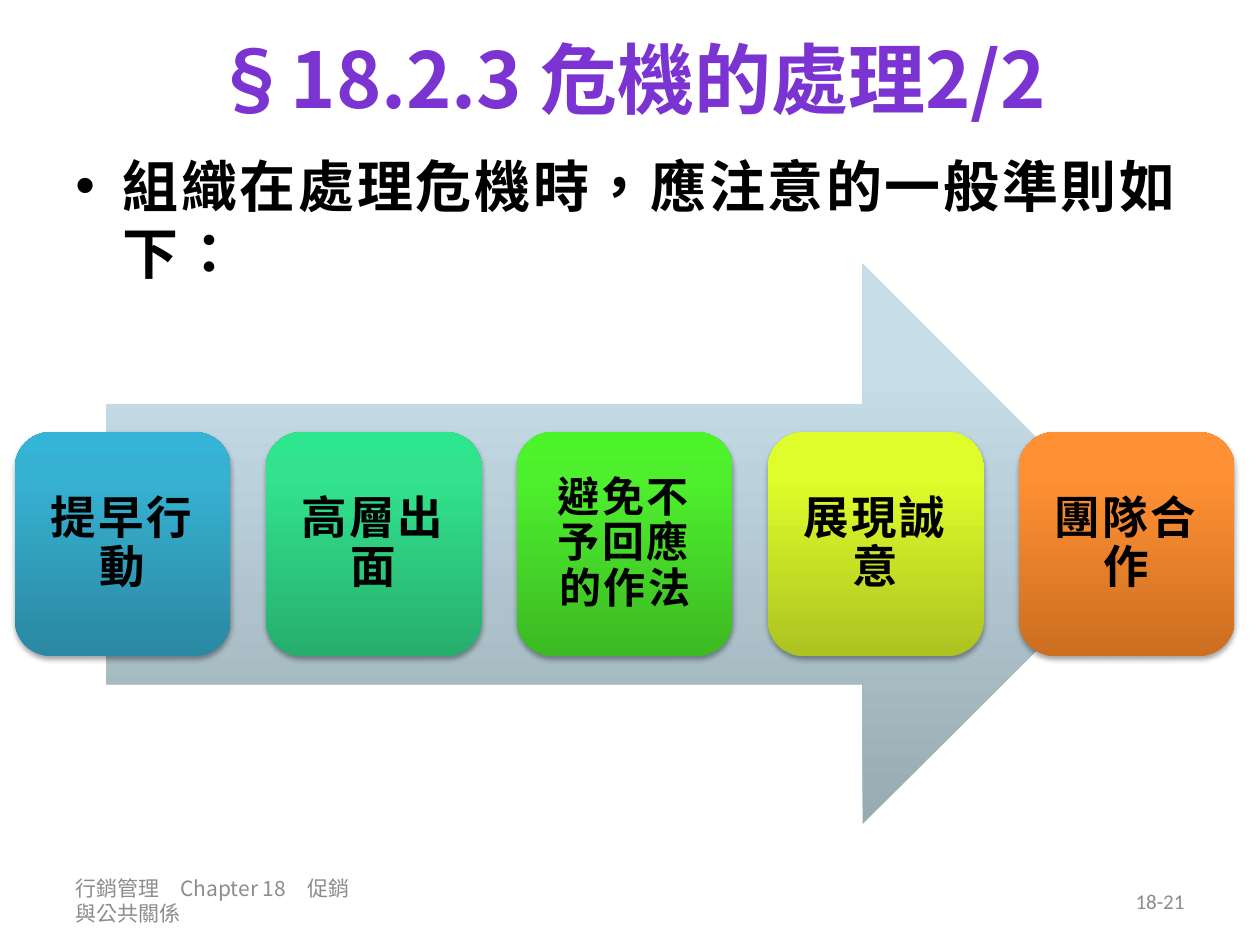
import pptx
import pptx.util
import pptx.dml.color
import pptx.enum.shapes
import pptx.enum.text
import pptx.oxml
import pptx.oxml.ns
import lxml.etree

Cm, Pt = pptx.util.Cm, pptx.util.Pt
ALIGN = pptx.enum.text.PP_ALIGN
ANCHOR = pptx.enum.text.MSO_ANCHOR
SHAPE = pptx.enum.shapes.MSO_SHAPE
NAMESPACE = pptx.oxml.ns.nsdecls("a")
CJK = "Noto Sans CJK SC"


def color(hex_text):
    return pptx.dml.color.RGBColor.from_string(hex_text)


def write(box, text, size, face, ink, align, anchor, bold=False, spacing=0):
    frame = box.text_frame
    frame.word_wrap = True
    frame.vertical_anchor = anchor
    para = frame.paragraphs[0]
    para.alignment = align
    span = para.add_run()
    span.text = text
    span.font.size = Pt(size)
    span.font.name = face
    span.font.bold = bold
    span.font.color.rgb = color(ink)
    properties = span.font._element
    properties.set("lang", "zh-TW")
    properties.set("spc", str(int(spacing * 100)))
    east_asian = lxml.etree.SubElement(properties, pptx.oxml.ns.qn("a:ea"))
    east_asian.set("typeface", CJK)
    return para


deck = pptx.Presentation()
deck.slide_width, deck.slide_height = Cm(25.4), Cm(19.05)
page = deck.slides.add_slide(deck.slide_layouts[6])

# Title
title = page.shapes.add_textbox(Cm(1.27), Cm(0), Cm(22.86), Cm(3.12))
write(title, "§18.2.3 危機的處理2/2", 44, CJK, "7B34D2",
      ALIGN.CENTER, ANCHOR.MIDDLE, bold=True)

# Bulleted lead sentence
lead = page.shapes.add_textbox(Cm(1.27), Cm(2.92), Cm(22.86), Cm(3.2))
para = write(lead, "組織在處理危機時，應注意的一般準則如下：", 32, "Calibri", "000000",
             ALIGN.LEFT, ANCHOR.TOP, bold=True, spacing=1.5)
indent = para._p.get_or_add_pPr()
indent.set("marL", str(Cm(0.95)))
indent.set("indent", str(-Cm(0.95)))
indent.append(pptx.oxml.parse_xml(f'<a:buFont {NAMESPACE} typeface="Arial"/>'))
indent.append(pptx.oxml.parse_xml(f'<a:buChar {NAMESPACE} char="•"/>'))

# Arrow behind the cards
arrow = page.shapes.add_shape(SHAPE.RIGHT_ARROW, Cm(2.13), Cm(5.33), Cm(20.9), Cm(11.28))
arrow.shadow.inherit = False
painted = [(arrow, ("98AAB2", "C5DDE7", "C6DEE9"))]

# Five cards at an equal step: text, size, gradient from bottom to top
cards = [
    ("提早行動", 26, ("2A88A2", "37B1D2", "34B4D6")),
    ("高層出面", 26, ("26AE6D", "32E28D", "2EE68E")),
    ("避免不予回應的作法", 24, ("3CB923", "4EF02E", "4CF52A")),
    ("展現誠意", 26, ("ACC321", "DFFD2B", "E1FF2B")),
    ("團隊合作", 26, ("CC6E20", "FF9034", "FF9136")),
]
for number, (text, size, shades) in enumerate(cards):
    card = page.shapes.add_shape(SHAPE.ROUNDED_RECTANGLE, Cm(0.3 + 5.06 * number),
                                 Cm(8.71), Cm(4.35), Cm(4.52))
    para = write(card, text, size, "Calibri", "000000",
                 ALIGN.CENTER, ANCHOR.MIDDLE, bold=True, spacing=1.5)
    para.line_spacing = 0.9
    frame = card.text_frame
    frame.margin_left = frame.margin_right = Cm(0.27)
    frame.margin_top = frame.margin_bottom = Cm(0.27)
    card.shadow.inherit = False
    effects = card._element.spPr.find(pptx.oxml.ns.qn("a:effectLst"))
    effects.append(pptx.oxml.parse_xml(
        f'<a:outerShdw {NAMESPACE} blurRad="{Pt(3.1)}" dist="{Pt(1.8)}" dir="5400000" '
        'rotWithShape="0"><a:srgbClr val="000000"><a:alpha val="35000"/></a:srgbClr>'
        '</a:outerShdw>'))
    painted.append((card, shades))

# Three-stop gradients, dark at the bottom
for shape, shades in painted:
    shape.line.fill.background()
    shape.fill.gradient()
    shape.fill.gradient_angle = 90
    stops = shape._element.spPr.find(".//" + pptx.oxml.ns.qn("a:gsLst"))
    for stop in list(stops):
        stops.remove(stop)
    for percent, shade in zip((0, 80, 100), shades):
        stops.append(pptx.oxml.parse_xml(
            f'<a:gs {NAMESPACE} pos="{percent * 1000}"><a:srgbClr val="{shade}"/></a:gs>'))

# Footer and page number
footer = page.shapes.add_textbox(Cm(1.27), Cm(17.65), Cm(6.22), Cm(1.02))
write(footer, "行銷管理　Chapter 18　促銷與公共關係", 12, CJK, "8C8C8C",
      ALIGN.LEFT, ANCHOR.MIDDLE)
page_number = page.shapes.add_textbox(Cm(18.21), Cm(17.65), Cm(5.92), Cm(1.02))
write(page_number, "18-21", 12, "Calibri", "8C8C8C", ALIGN.RIGHT, ANCHOR.MIDDLE)

deck.save("out.pptx")
